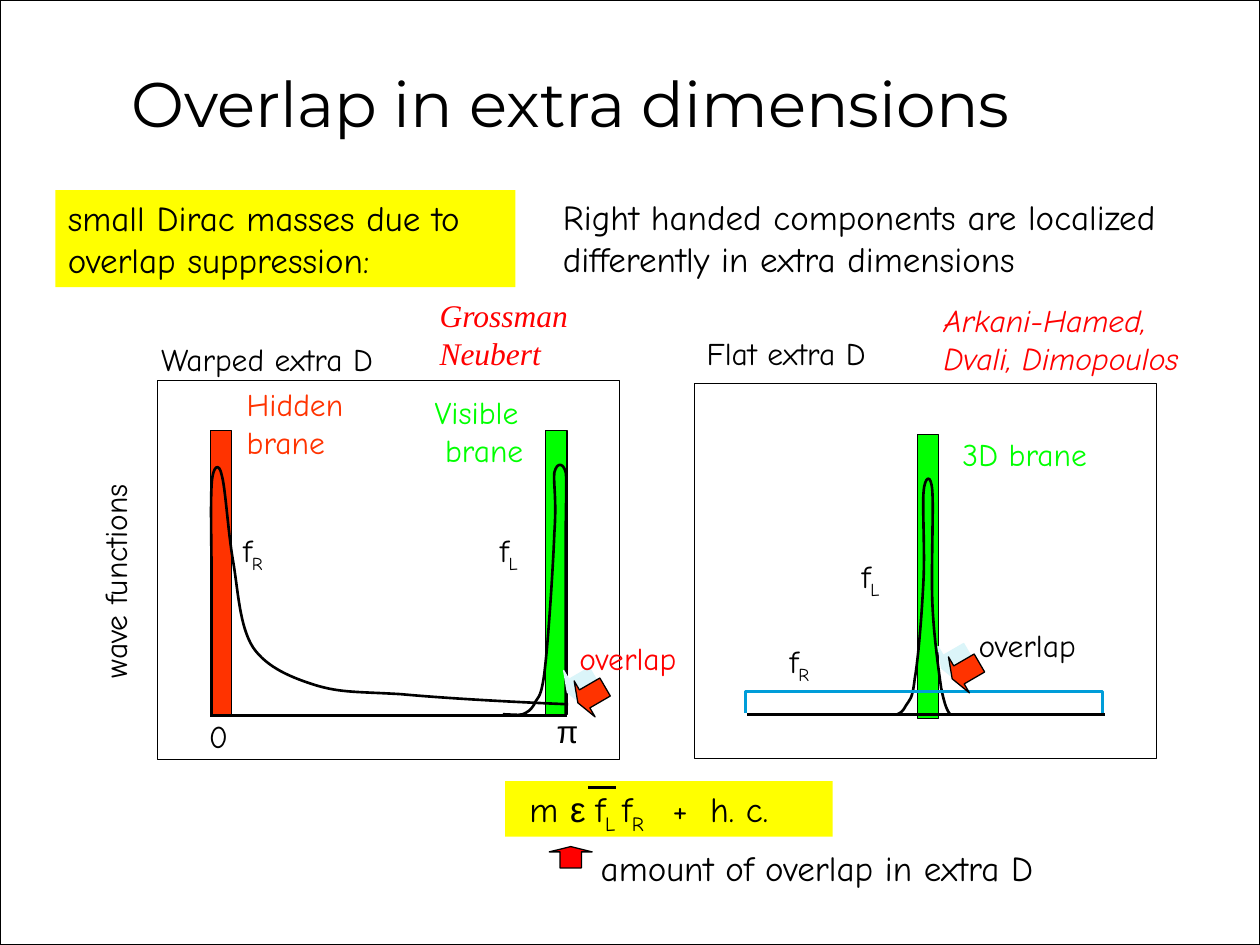
from lxml import etree
from pptx import Presentation
from pptx.dml import color as dml
from pptx.enum import shapes, text
from pptx.oxml import ns
from pptx.util import Pt

COLORS = {"white": "FFFFFF", "black": "000000", "yellow": "FFFF00", "red": "FF0000",
          "orange": "FF3300", "green": "00FF00", "blue": "009DD9", "pale": "DBF5F9"}
HAND, SERIF, SANS, HEADING = "Comic Neue", "Times New Roman", "Arial", "Montserrat"
RECTANGLE = shapes.MSO_SHAPE.RECTANGLE

# Content: left, top, width, height in points
TITLE = ("Overlap in extra dimensions", (59, 33, 534, 64))
RECTANGLES = [
    ((0, 0, 720, 540), "white"),          # slide frame
    ((396.7, 219, 264.2, 214.6), "white"),  # flat panel
    ((90, 217.4, 264.2, 216.7), "white"),   # warped panel
    ((311.8, 246.2, 12.2, 162), "green"),   # visible brane
    ((120.2, 246.2, 12.2, 162), "orange"),  # hidden brane
    ((524.2, 248.4, 12.2, 162), "green"),   # 3D brane
]
AXES = [(120.2, 409, 324), (427, 408.2, 631.4)]  # left, y, right
OVERBAR = (336.2, 450, 352.1)
FLAT_RIGHT = [(426.2, 407.5), (426.2, 395.3), (630, 395.3), (630, 407.5)]

# Start point, then three points for each cubic segment
CURVES = {
    "warped right": [
        (121, 408.2), (121, 383), (121, 358.6), (121, 337),
        (121, 315.4), (120.2, 288), (121, 276.5),
        (121.7, 265.7), (125.3, 264.2), (126.7, 271.4),
        (128.9, 278.6), (130.3, 303.8), (133.2, 320.4),
        (136.1, 337), (136.8, 357.8), (144.7, 370.1),
        (152.6, 381.6), (167, 387.4), (180.7, 391.7),
        (195.1, 396), (205.2, 395.3), (229, 396.7),
        (252.7, 398.9), (288.7, 401), (324.7, 402.5)],
    "warped left": [
        (287.3, 408.2), (291.6, 408.2), (295.9, 409), (298.8, 408.2),
        (301.7, 406.8), (303.1, 406.1), (305.3, 402.5),
        (306.7, 398.2), (308.9, 401), (311, 385.2),
        (313.2, 368.6), (316.1, 323.3), (316.8, 304.6),
        (318.2, 285.1), (316.1, 275.8), (316.8, 270),
        (318.2, 264.2), (321.8, 264.2), (323.3, 270),
        (324, 275.8), (323.3, 285.8), (323.3, 304.6),
        (323.3, 322.6), (323.3, 362.2), (323.3, 379.4),
        (323.3, 396.7), (323.3, 402.5), (323.3, 408.2)],
    "flat left": [
        (512.6, 408.2), (514.8, 407.5), (516.2, 406.1), (517.7, 403.2),
        (519.8, 399.6), (521.3, 400.3), (522.7, 388.1),
        (524.9, 375.8), (527, 347.8), (527.8, 329.8),
        (528.5, 311.8), (527, 288.7), (527.8, 280.8),
        (528.5, 272.2), (532.1, 270), (532.8, 280.8),
        (533.5, 290.9), (532.1, 325.4), (532.8, 344.2),
        (533.5, 362.9), (536.4, 383), (537.8, 393.1),
        (540, 403.9), (541.4, 406.1), (542.9, 408.2)],
}
OVERLAP_ARROWS = [(329, 385.2, 18, 23.8), (542.9, 371.5, 18, 23.8)]
AMOUNT_ARROW = (313.9, 483.8, 24.5, 12.2)

# Text lines, box, colour, then any options
LABELS = [
    (["0"], (112.3, 406.1, 25.2, 29), "black", {}),
    (["π"], (311, 403.2, 25.2, 31), "black", {"font": SANS}),
    (["Hidden", "brane"], (133.9, 216.7, 79.2, 50.4), "orange", {}),
    (["Visible", " brane"], (241.2, 221, 70.6, 50.4), "green", {}),
    (["wave functions"], (-9.4, 303.1, 152, 31), "black", {"rotation": 270}),
    (["Grossman", "Neubert"], (244.1, 165.6, 92.9, 50.4), "red",
     {"font": SERIF, "italic": True}),
    (["Arkani-Hamed,", "Dvali, Dimopoulos"], (532.1, 168.5, 165.6, 51.1), "red",
     {"italic": True}),
    (["3D brane"], (542.9, 244.8, 91.4, 28.8), "green", {}),
    (["overlap"], (552.2, 354.2, 82.1, 31), "black", {}),
    (["overlap"], (324, 361.4, 74.9, 28.8), "red", {}),
    (["Flat extra D"], (396.7, 187.2, 118.8, 28.8), "black", {}),
    (["Warped extra D"], (85, 190.8, 152, 28.8), "black", {}),
    (["small Dirac masses due to", "overlap suppression:"],
     (31.7, 108.7, 262.8, 55.4), "black", {"size": 20, "fill": "yellow"}),
    (["Right handed components are localized", "differently in extra dimensions"],
     (314.6, 108, 385.2, 55.4), "black", {"size": 20}),
    (["amount of overlap in extra D"], (336.2, 480.2, 284.4, 31.7), "black", {"size": 20}),
]
WAVE_LABELS = [("R", 131.8, 300.2), ("L", 278.6, 300.2), ("R", 444.2, 363.6), ("L", 485.3, 314.6)]
# Text, font, subscript
FORMULA = [(" m ", HAND, False), ("ε ", SANS, False), ("f", HAND, False), ("L ", HAND, True),
           ("f", HAND, False), ("R", HAND, True), ("\t+\th. c.", HAND, False)]
FORMULA_BOX, FORMULA_TABS = (288.7, 446.4, 187.2, 31.7), (88.5, 110)


def rgb(name):
    return dml.RGBColor.from_string(COLORS[name])


def points(values):
    return [Pt(value) for value in values]


def style(shape, fill=None, line=None, width=0.75):
    shape.shadow.inherit = False
    if fill:
        shape.fill.solid()
        shape.fill.fore_color.rgb = rgb(fill)
    else:
        shape.fill.background()
    if line:
        shape.line.color.rgb = rgb(line)
        shape.line.width = Pt(width)
    else:
        shape.line.fill.background()


def add_preset(slide, kind, box, fill, line="black"):
    shape = slide.shapes.add_shape(kind, *points(box))
    style(shape, fill, line)
    return shape


def add_line(slide, left, y, right):
    line = slide.shapes.add_connector(shapes.MSO_CONNECTOR.STRAIGHT, *points((left, y, right, y)))
    line.line.color.rgb = rgb("black")
    line.line.width = Pt(1.5)
    etree.SubElement(line._element.spPr, ns.qn("a:effectLst"))


def add_outline(slide, vertices, color):
    start, *rest = [points(vertex) for vertex in vertices]
    builder = slide.shapes.build_freeform(*start, scale=1.0)
    builder.add_line_segments(rest, close=False)
    shape = builder.convert_to_shape()
    style(shape, line=color, width=1.5)
    return shape


def add_curve(slide, vertices):
    """Join each three straight segments into one cubic segment."""
    shape = add_outline(slide, vertices, "black")
    segments = list(shape._element.iter(ns.qn("a:lnTo")))
    for first in range(0, len(segments), 3):
        group = segments[first:first + 3]
        cubic = etree.Element(ns.qn("a:cubicBezTo"))
        group[0].addprevious(cubic)
        for segment in group:
            cubic.append(segment[0])
            segment.getparent().remove(segment)


def add_runs(paragraph, runs, color="black", size=18, italic=False):
    for content, font, subscript in runs:
        run = paragraph.add_run()
        run.text = content
        run.font.name, run.font.size, run.font.italic = font, Pt(size), italic
        run.font.color.rgb = rgb(color)
        if subscript:
            run._r.get_or_add_rPr().set("baseline", "-25000")


def add_text(slide, lines, box, color, fill=None, rotation=0, **look):
    """Each line is a list of runs."""
    if fill:
        shape = add_preset(slide, RECTANGLE, box, fill, None)
    else:
        shape = slide.shapes.add_textbox(*points(box))
    shape.rotation = rotation
    frame = shape.text_frame
    frame.word_wrap = True
    frame.vertical_anchor = text.MSO_ANCHOR.TOP
    for index, runs in enumerate(lines):
        paragraph = frame.add_paragraph() if index else frame.paragraphs[0]
        paragraph.alignment = text.PP_ALIGN.LEFT
        add_runs(paragraph, runs, color, **look)
    return frame


def add_title(slide):
    title = slide.shapes.title
    title.left, title.top, title.width, title.height = points(TITLE[1])
    frame = title.text_frame
    frame.text = TITLE[0]
    frame.word_wrap = False
    frame.vertical_anchor = text.MSO_ANCHOR.TOP
    frame.paragraphs[0].alignment = text.PP_ALIGN.CENTER
    font = frame.paragraphs[0].runs[0].font
    font.name, font.size, font.color.rgb = HEADING, Pt(36), rgb("black")
    slide.shapes._spTree.append(title._element)  # in front of the slide frame


def add_arrow(slide, kind, box, fill):
    arrow = add_preset(slide, kind, box, fill)
    arrow.adjustments[0], arrow.adjustments[1] = 0.5, 0.25
    return arrow


def main():
    presentation = Presentation()
    presentation.slide_width, presentation.slide_height = Pt(720), Pt(540)
    slide = presentation.slides.add_slide(presentation.slide_layouts[5])

    # Panels, branes and wave functions
    for box, fill in RECTANGLES:
        add_preset(slide, RECTANGLE, box, fill)
    add_title(slide)
    for vertices in CURVES.values():
        add_curve(slide, vertices)
    add_outline(slide, FLAT_RIGHT, "blue")
    for axis in AXES:
        add_line(slide, *axis)

    # Arrows, the overlap ones with an offset shadow
    for box in OVERLAP_ARROWS:
        arrow = add_arrow(slide, shapes.MSO_SHAPE.LEFT_ARROW, box, "orange")
        arrow.rotation = 329.8
        effects = arrow._element.spPr.find(ns.qn("a:effectLst"))
        shadow = etree.SubElement(effects, ns.qn("a:outerShdw"), blurRad="0",
                                  dist=str(Pt(8.5)), dir=str(225 * 60000), rotWithShape="0")
        etree.SubElement(shadow, ns.qn("a:srgbClr"), val=COLORS["pale"])
    add_arrow(slide, shapes.MSO_SHAPE.UP_ARROW, AMOUNT_ARROW, "red")

    # Labels
    for lines, box, color, options in LABELS:
        look = dict(options)
        font = look.pop("font", HAND)
        add_text(slide, [[(line, font, False)] for line in lines], box, color, **look)
    for side, left, top in WAVE_LABELS:
        add_text(slide, [[("f", HAND, False), (side, HAND, True)]], (left, top, 31.7, 28.8), "black")

    # Mass formula
    frame = add_text(slide, [FORMULA], FORMULA_BOX, "black", fill="yellow", size=20)
    tabs = etree.SubElement(frame.paragraphs[0]._p.get_or_add_pPr(), ns.qn("a:tabLst"))
    for position in FORMULA_TABS:
        etree.SubElement(tabs, ns.qn("a:tab"), pos=str(Pt(position)), algn="l")
    add_line(slide, *OVERBAR)
    presentation.save("out.pptx")


if __name__ == "__main__":
    main()
